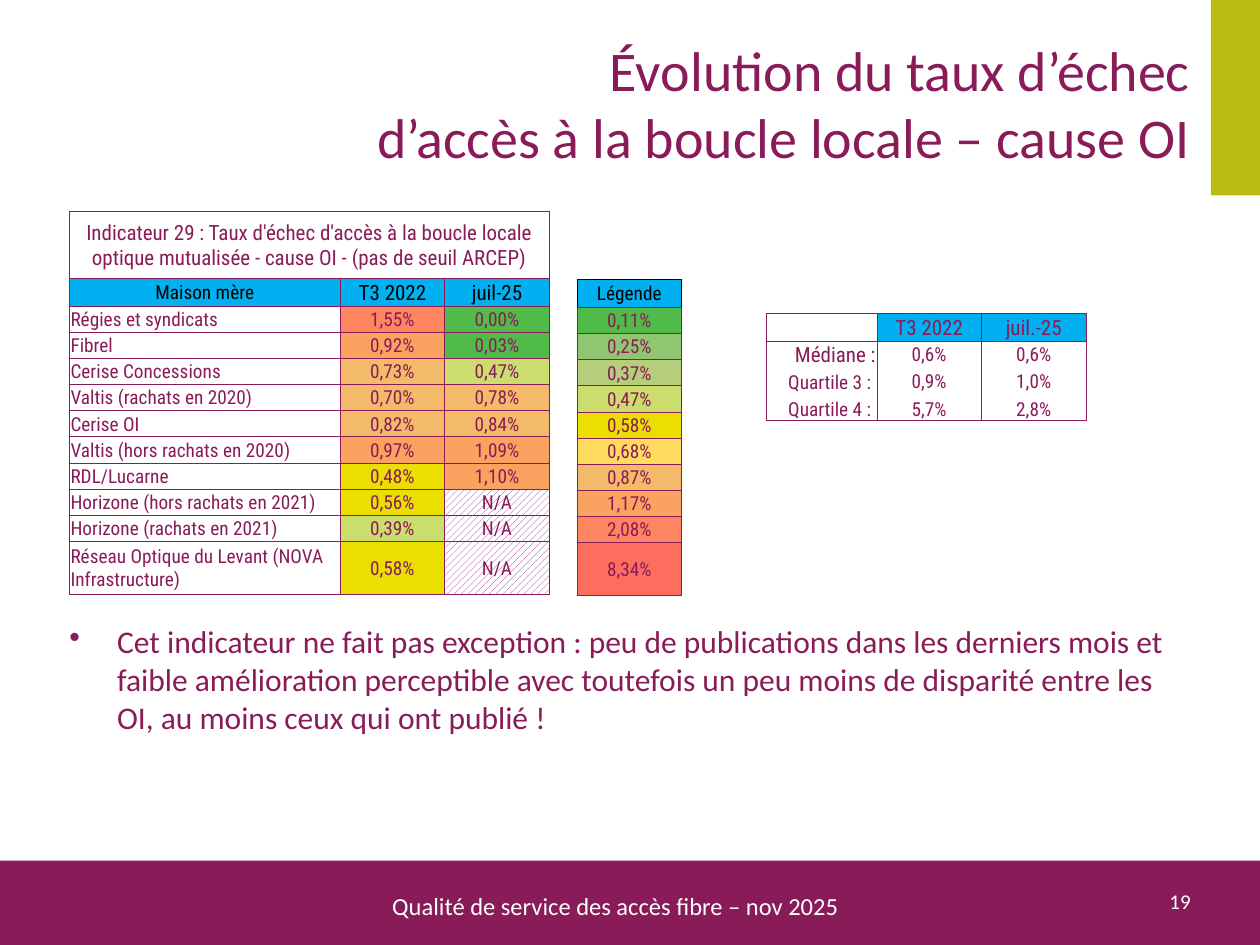
from lxml import etree
from pptx import Presentation
from pptx.dml.color import RGBColor
from pptx.enum import shapes, text
from pptx.oxml.ns import qn
from pptx.util import Inches, Pt

C = {"plum": "8A1B59", "olive": "BBBB13", "blue": "00B0F0", "hatch": "A02B93",
     "white": "FFFFFF", "black": "000000"}
BODY, DATA = "Calibri", "Roboto Condensed"
LEFT, CENTER, RIGHT = text.PP_ALIGN.LEFT, text.PP_ALIGN.CENTER, text.PP_ALIGN.RIGHT
MIDDLE, BOTTOM = text.MSO_ANCHOR.MIDDLE, text.MSO_ANCHOR.BOTTOM

# Upper limit of each class, in percent, with its colour
LEGEND = [("0,11%", "51BB49"), ("0,25%", "90C672"), ("0,37%", "B5CE7C"),
          ("0,47%", "CBDD6D"), ("0,58%", "EADF00"), ("0,68%", "FFDC5D"),
          ("0,87%", "F3BB69"), ("1,17%", "FAA260"), ("2,08%", "FD855F"),
          ("8,34%", "FD6E5F")]

RATES = [("Régies et syndicats", "1,55%", "0,00%"),
         ("Fibrel", "0,92%", "0,03%"),
         ("Cerise Concessions", "0,73%", "0,47%"),
         ("Valtis (rachats en 2020)", "0,70%", "0,78%"),
         ("Cerise OI", "0,82%", "0,84%"),
         ("Valtis (hors rachats en 2020)", "0,97%", "1,09%"),
         ("RDL/Lucarne", "0,48%", "1,10%"),
         ("Horizone (hors rachats en 2021)", "0,56%", "N/A"),
         ("Horizone (rachats en 2021)", "0,39%", "N/A"),
         ("Réseau Optique du Levant (NOVA Infrastructure)", "0,58%", "N/A")]

SPREAD = [("Médiane :", "0,6%", "0,6%"),
          ("Quartile 3 : ", "0,9%", "1,0%"),
          ("Quartile 4 : ", "5,7%", "2,8%")]

# Row heights shared by the rates and the legend
HEADER_H, LAST_H = 0.22, 0.42
ROWS = [HEADER_H] + [1.87 / 9] * 9 + [LAST_H]
VALUE_W = 0.83


def percent(label):
    return float(label.rstrip("%").replace(",", "."))


def class_colour(label):
    """Colour of the first legend class that holds the value."""
    return next(c for limit, c in LEGEND if percent(label) <= percent(limit))


def write(tf, content, size, color, font=BODY, align=LEFT):
    p = tf.paragraphs[0]
    p.alignment = align
    p.text = content
    for r in p.runs:
        for name, value in {"size": Pt(size), "name": font, "bold": False}.items():
            setattr(r.font, name, value)
        r.font.color.rgb = RGBColor.from_string(C[color])
    return p


def set_frame(tf, **extra):
    margins = dict.fromkeys(
        ("margin_left", "margin_right", "margin_top", "margin_bottom"), Inches(0.05))
    for name, value in {**margins, "word_wrap": True, **extra}.items():
        setattr(tf, name, value)


def add_text(s, box, content, size, color, align=LEFT, **frame):
    tf = s.shapes.add_textbox(*map(Inches, box)).text_frame
    set_frame(tf, **frame)
    return write(tf, content, size, color, align=align)


def add_band(s, box, color):
    sp = s.shapes.add_shape(shapes.MSO_SHAPE.RECTANGLE, *map(Inches, box))
    sp.shadow.inherit = False
    sp.fill.solid()
    sp.fill.fore_color.rgb = RGBColor.from_string(C[color])
    sp.line.fill.background()


def add_bullet(p, indent):
    pPr = p._p.get_or_add_pPr()
    pPr.set("marL", str(Inches(indent)))
    pPr.set("indent", str(-Inches(indent)))
    etree.SubElement(pPr, qn("a:buChar")).set("char", "•")


def set_borders(cell, colors):
    """Draw half-point borders; a side without a colour has no line."""
    tcPr = cell._tc.get_or_add_tcPr()
    for side in "LRTB":
        ln = etree.SubElement(tcPr, qn("a:ln" + side))
        ln.set("w", str(Pt(0.5)))
        if colors.get(side):
            fill = etree.SubElement(ln, qn("a:solidFill"))
            etree.SubElement(fill, qn("a:srgbClr")).set("val", C[colors[side]])
        else:
            etree.SubElement(ln, qn("a:noFill"))


def set_cell(cell, content, size=11, color="plum", align=CENTER, fill=None,
             anchor=MIDDLE, borders=None):
    format_values = {"margin_left": Inches(0.01), "margin_right": Inches(0.01),
                     "margin_top": Inches(0.01), "margin_bottom": 0,
                     "vertical_anchor": anchor}
    for name, value in format_values.items():
        setattr(cell, name, value)
    p = write(cell.text_frame, content, size, color, DATA, align)
    if not content:
        etree.SubElement(p._p, qn("a:endParaRPr")).set("sz", str(size * 100))
    set_borders(cell, borders or dict.fromkeys("LRTB", "plum"))
    if fill == "hatch":
        cell.fill.patterned()
        cell._tc.tcPr.find(qn("a:pattFill")).set("prst", "upDiag")
        cell.fill.fore_color.rgb = RGBColor.from_string(C["hatch"])
        cell.fill.back_color.rgb = RGBColor.from_string(C["white"])
    elif fill:
        cell.fill.solid()
        cell.fill.fore_color.rgb = RGBColor.from_string(fill)
    else:
        cell.fill.background()


def add_grid(s, left, top, widths, heights):
    size = map(Inches, (left, top, sum(widths), sum(heights)))
    table = s.shapes.add_table(len(heights), len(widths), *size).table
    table.first_row = table.horz_banding = False
    for col, w in zip(table.columns, widths):
        col.width = Inches(w)
    for row, h in zip(table.rows, heights):
        row.height = Inches(h)
    return table


def add_rates(s):
    t = add_grid(s, 0.55, 1.68, [2.15, VALUE_W, VALUE_W], [0.53] + ROWS)
    for c in range(3):
        set_cell(t.cell(0, c), "")
    t.cell(0, 0).merge(t.cell(0, 2))
    write(t.cell(0, 0).text_frame, "Indicateur 29 : Taux d'échec d'accès à la boucle locale "
          "optique mutualisée - cause OI - (pas de seuil ARCEP)", 12, "plum", DATA, CENTER)
    for c, (label, size) in enumerate([("Maison mère", 11), ("T3 2022", 12), ("juil-25", 12)]):
        set_cell(t.cell(1, c), label, size, "black", fill=C["blue"])
    for i, (name, *values) in enumerate(RATES, 2):
        set_cell(t.cell(i, 0), name, align=LEFT)
        for c, value in enumerate(values, 1):
            fill = "hatch" if value == "N/A" else class_colour(value)
            set_cell(t.cell(i, c), value, fill=fill)


def add_legend(s):
    t = add_grid(s, 4.58, 2.22, [VALUE_W], ROWS)
    set_cell(t.cell(0, 0), "Légende", color="black", fill=C["blue"],
             borders={"L": "black", "T": "black", "R": "black", "B": "plum"})
    for i, (limit, color) in enumerate(LEGEND, 1):
        set_cell(t.cell(i, 0), limit, fill=color)


def add_spread(s):
    t = add_grid(s, 6.08, 2.49, [0.88, VALUE_W, VALUE_W], [HEADER_H] + [0.21] * 3)
    for c, label in enumerate(["", "T3 2022", "juil.-25"]):
        set_cell(t.cell(0, c), label, 12, fill=C["blue"] if label else None)
    last = len(SPREAD)
    for i, row in enumerate(SPREAD, 1):
        borders = {"L": "plum", "R": "plum", "T": "plum" if i == 1 else None,
                   "B": "plum" if i == last else None}
        for c, label in enumerate(row):
            low = i == last or (c == 0 and i > 1)
            set_cell(t.cell(i, c), label, 12 if (i, c) == (1, 0) else 11,
                     align=CENTER if c else RIGHT,
                     anchor=BOTTOM if low else MIDDLE, borders=borders)


def main():
    prs = Presentation()
    prs.slide_width, prs.slide_height = Inches(10), Inches(7.5)
    s = prs.slides.add_slide(prs.slide_layouts[5])

    # Bands and footer
    add_band(s, (0, 6.83, 10, 0.67), "plum")
    add_band(s, (9.61, 0, 0.39, 1.55), "olive")
    add_text(s, (2.39, 7.02, 4.99, 0.34), "Qualité de service des accès fibre – nov 2025",
             14, "white", CENTER)
    add_text(s, (9.22, 7.02, 0.28, 0.27), "19", 12, "white", RIGHT,
             word_wrap=False, vertical_anchor=MIDDLE)

    # Title
    title = s.shapes.title
    for name, value in zip(("left", "top", "width", "height"), (0.5, 0.19, 9, 1.25)):
        setattr(title, name, Inches(value))
    set_frame(title.text_frame, vertical_anchor=MIDDLE, auto_size=text.MSO_AUTO_SIZE.NONE)
    write(title.text_frame, "Évolution du taux d’échec\vd’accès à la boucle locale – cause OI",
          32, "plum", align=RIGHT)

    # Tables
    add_rates(s)
    add_legend(s)
    add_spread(s)

    # Comment
    p = add_text(s, (0.5, 4.89, 9, 1.81),
                 "Cet indicateur ne fait pas exception : peu de publications dans les derniers "
                 "mois et faible amélioration perceptible avec toutefois un peu moins de "
                 "disparité entre les OI, au moins ceux qui ont publié !", 18, "plum")
    add_bullet(p, 0.38)

    prs.save("out.pptx")


if __name__ == "__main__":
    main()
